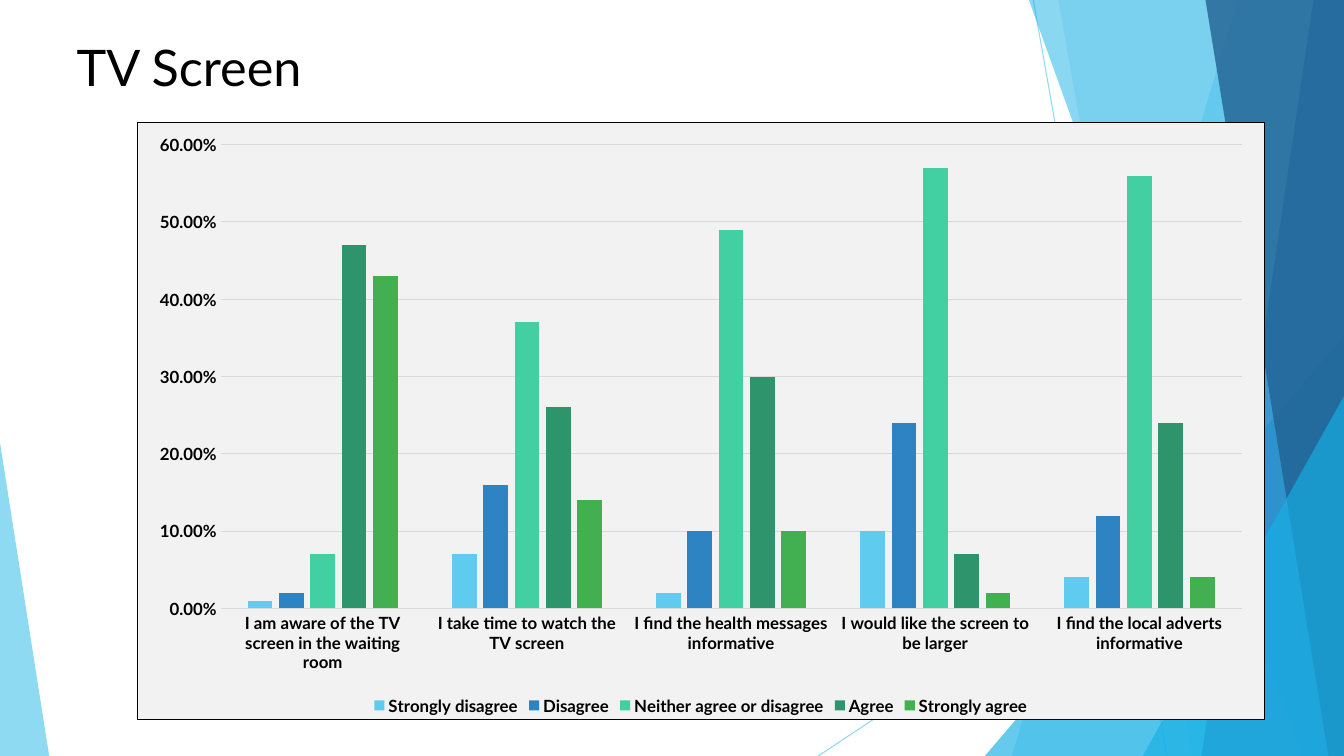
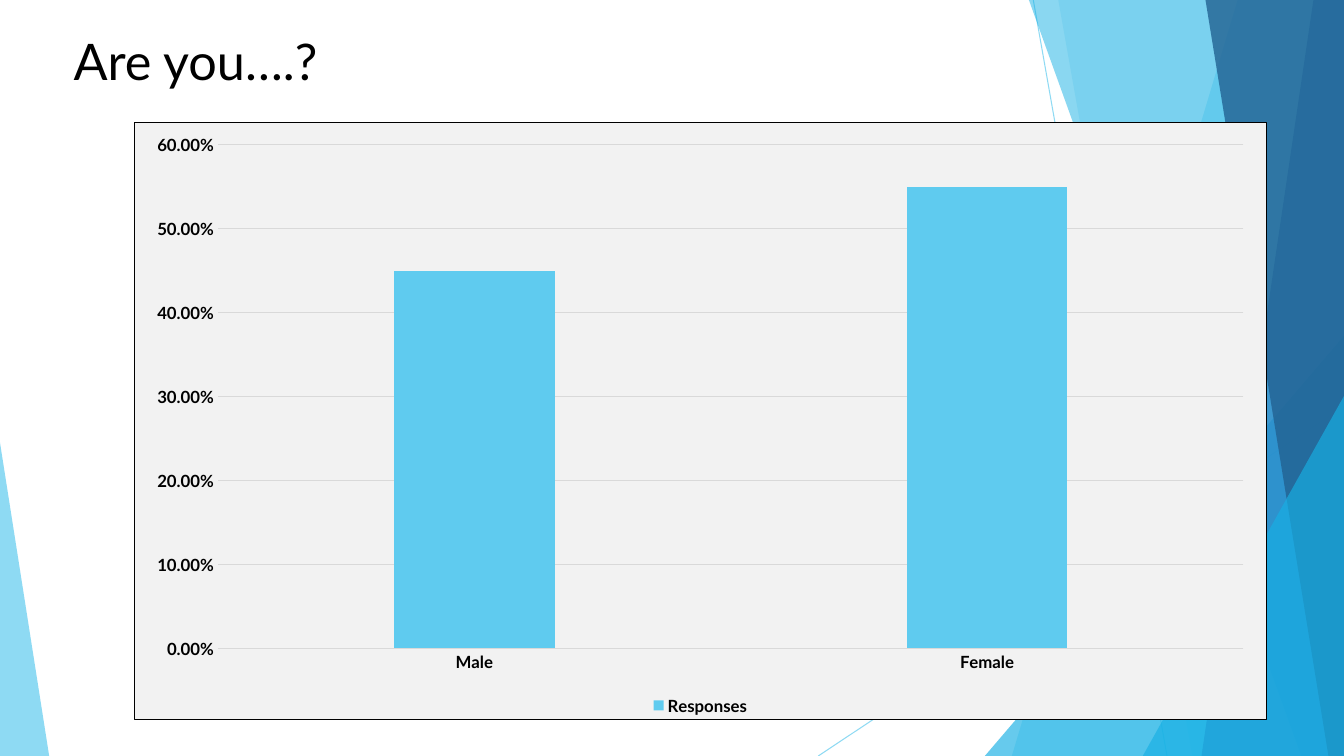
"""Build two survey slides, each a title and a column chart over shared facets."""
from lxml import etree
from pptx import Presentation
from pptx import util as u
from pptx.chart.data import CategoryChartData
from pptx.dml.color import RGBColor
from pptx.enum import chart as ch, shapes, text
from pptx.oxml import parse_xml
from pptx.oxml.ns import nsdecls, qn

FONT = "Lato"
BLACK = RGBColor(0x00, 0x00, 0x00)
PALE = RGBColor(0xF2, 0xF2, 0xF2)
GRID = RGBColor(0xD9, 0xD9, 0xD9)
SKY = RGBColor(0x5F, 0xCB, 0xEF)
CYAN = RGBColor(0x17, 0xB0, 0xE4)
BLUE = RGBColor(0x2E, 0x83, 0xC3)
NAVY = RGBColor(0x22, 0x62, 0x92)
MINT = RGBColor(0x42, 0xD0, 0xA2)
PINE = RGBColor(0x2E, 0x94, 0x6B)
LEAF = RGBColor(0x42, 0xB0, 0x51)
SERIES = [SKY, BLUE, MINT, PINE, LEAF]
WIDE, HIGH = 33.87, 19.05
HAIR = u.Pt(0.75)

FACETS = [
    ("line", (26.04, 0, 29.41, HIGH), SKY, 70),
    ("line", (WIDE, 10.24, 20.62, HIGH), SKY, 70),
    ("band", (31.19, 25.5), SKY, 36),
    ("band", (26.67, 30.05), SKY, 20),
    ("peak", (24.82, 8.46, WIDE, 1), CYAN, 66),
    ("band", (25.93, 32.79), CYAN, 50),
    ("band", (33.1, 30.28), BLUE, 70),
    ("band", (30.38, 33.48), NAVY, 80),
    ("peak", (28.8, 9.98, WIDE, 1), CYAN, 66),
    ("peak", (0, 11.15, 1.24, 0), SKY, 70),
]

SLIDES = [
    {
        "title": "TV Screen",
        "head": (1.68, 0.79, 23.88, 1.98),
        "box": (3.45, 3.08, 28.42, 15.06),
        "cats": [
            "I am aware of the TV screen in the waiting room",
            "I take time to watch the TV screen",
            "I find the health messages informative",
            "I would like the screen to be larger",
            "I find the local adverts informative",
        ],
        "data": {
            "Strongly disagree": (0.01, 0.07, 0.02, 0.1, 0.04),
            "Disagree": (0.02, 0.16, 0.1, 0.24, 0.12),
            "Neither agree or disagree": (0.07, 0.37, 0.49, 0.57, 0.56),
            "Agree": (0.47, 0.26, 0.3, 0.07, 0.24),
            "Strongly agree": (0.43, 0.14, 0.1, 0.02, 0.04),
        },
    },
    {
        "title": "Are you….?",
        "head": (1.6, 0.64, 23.88, 2.01),
        "box": (3.38, 3.08, 28.54, 15.06),
        "cats": ["Male", "Female"],
        "data": {"Responses": (0.45, 0.55)},
    },
]


def cms(vals):
    return [u.Cm(val) for val in vals]


def style(font, size, bold=False):
    font.name, font.size, font.bold = FONT, u.Pt(size), bold
    font.color.rgb = BLACK


def write(shape, words, size=36, bold=False, align=text.PP_ALIGN.LEFT):
    frame = shape.text_frame
    frame.word_wrap = True
    frame.auto_size = text.MSO_AUTO_SIZE.NONE
    frame.vertical_anchor = text.MSO_ANCHOR.TOP
    para = frame.paragraphs[0]
    para.alignment = align
    run = para.add_run()
    run.text = words
    style(run.font, size, bold)


def facet(tree, kind, geom, color, alpha):
    if kind == "line":
        item = tree.add_connector(shapes.MSO_CONNECTOR.STRAIGHT, *cms(geom))
        item.line.color.rgb, item.line.width = color, HAIR
        etree.SubElement(item.element.spPr, qn("a:effectLst"))
    else:
        if kind == "band":
            top, low = geom
            pen = tree.build_freeform(*cms((top, 0)))
            ends = [(WIDE, 0), (WIDE, HIGH), (low, HIGH)]
            pen.add_line_segments([cms(end) for end in ends], close=True)
            item = pen.convert_to_shape()
        else:
            left, top, right, tip = geom
            item = tree.add_shape(shapes.MSO_SHAPE.ISOSCELES_TRIANGLE,
                                  *cms((left, top, right - left, HIGH - top)))
            item.adjustments[0] = tip
        item.fill.solid()
        item.fill.fore_color.rgb = color
        item.line.fill.background()
        item.shadow.inherit = False
    tint = next(item.element.iter(qn("a:srgbClr")))
    etree.SubElement(tint, qn("a:alpha")).set("val", str(alpha * 1000))
    return item.element


def backdrop(slide, layout):
    base = layout.shapes.element
    for num, args in enumerate(FACETS):
        part = facet(slide.shapes, *args)
        part.xpath(".//p:cNvPr")[0].set("id", str(100 + num))
        base.insert(2 + num, part)


def plot(slide, box, cats, data):
    feed = CategoryChartData(number_format="0.00%")
    feed.categories = cats
    for name, vals in data.items():
        feed.add_series(name, vals)
    kind = ch.XL_CHART_TYPE.COLUMN_CLUSTERED
    chart = slide.shapes.add_chart(kind, *cms(box), feed).chart
    style(chart.font, 10)
    chart.has_title = False
    chart.has_legend = True
    chart.legend.position = ch.XL_LEGEND_POSITION.BOTTOM
    chart.legend.include_in_layout = False
    style(chart.legend.font, 12, bold=True)
    for axis in (chart.category_axis, chart.value_axis):
        axis.major_tick_mark = axis.minor_tick_mark = ch.XL_TICK_MARK.NONE
        style(axis.tick_labels.font, 12, bold=True)
    rows = chart.value_axis
    rows.minimum_scale, rows.maximum_scale, rows.major_unit = 0, 0.6, 0.1
    rows.tick_labels.number_format = "0.00%"
    rows.tick_labels.number_format_is_linked = False
    rows.format.line.fill.background()
    for line in (chart.category_axis.format.line, rows.major_gridlines.format.line):
        line.color.rgb, line.width = GRID, HAIR
    bars = chart.plots[0]
    bars.gap_width, bars.overlap, bars.vary_by_categories = 219, -27, False
    for one, color in zip(bars.series, SERIES):
        one.format.fill.solid()
        one.format.fill.fore_color.rgb = color
    frame = parse_xml(
        f'<c:spPr {nsdecls("c", "a")}>'
        f'<a:solidFill><a:srgbClr val="{PALE}"/></a:solidFill>'
        f'<a:ln w="{HAIR}"><a:solidFill><a:srgbClr val="{BLACK}"/></a:solidFill></a:ln>'
        '</c:spPr>')
    chart.element.find(qn("c:chart")).addnext(frame)


def main():
    deck = Presentation()
    deck.slide_width, deck.slide_height = cms((WIDE, HIGH))
    layout = deck.slide_layouts.get_by_name("Title Only")
    for num, page in enumerate(SLIDES):
        slide = deck.slides.add_slide(layout)
        if num == 0:
            backdrop(slide, layout)
        title = slide.shapes.title
        title.left, title.top, title.width, title.height = cms(page["head"])
        write(title, page["title"])
        plot(slide, page["box"], page["cats"], page["data"])
    deck.save("out.pptx")


if __name__ == "__main__":
    main()
